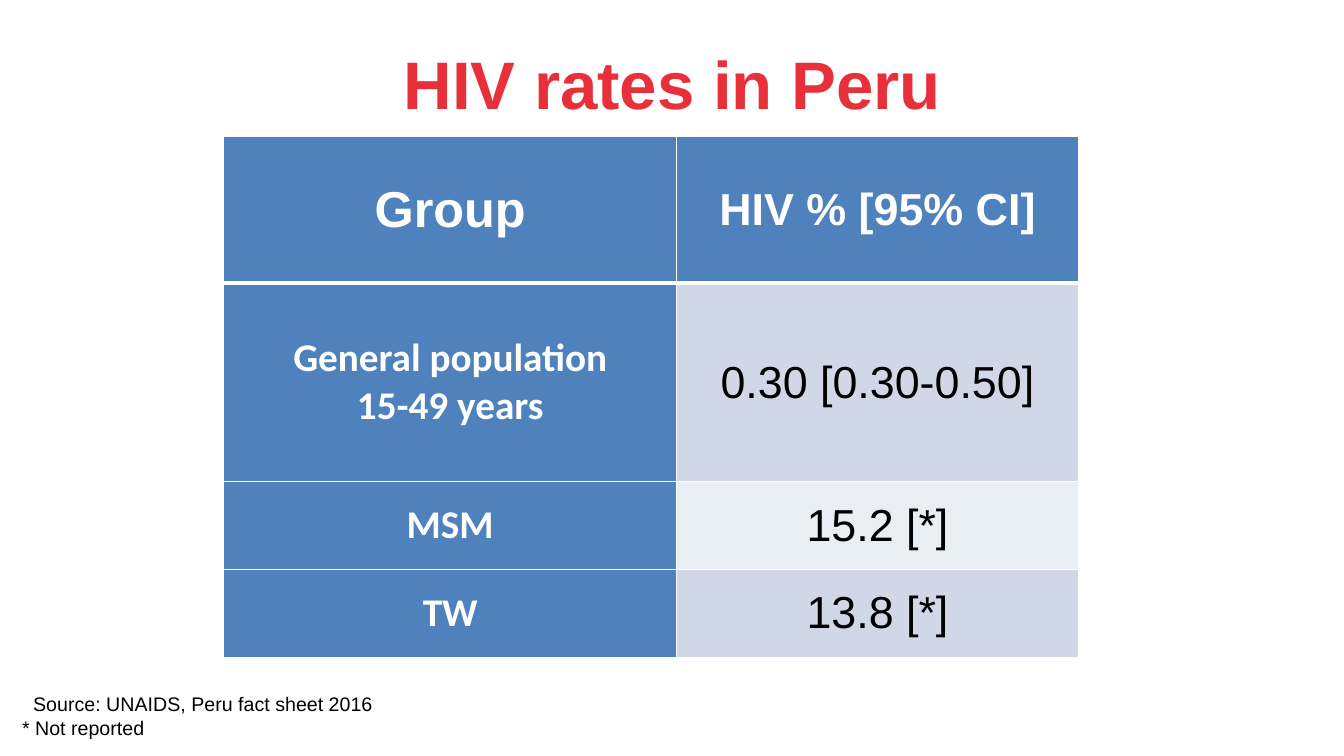
import dataclasses

import lxml.etree
import pptx
import pptx.dml.color
import pptx.enum.text
import pptx.oxml.ns
import pptx.util

Inches = pptx.util.Inches
Pt = pptx.util.Pt
ALIGN = pptx.enum.text.PP_ALIGN
MIDDLE = pptx.enum.text.MSO_ANCHOR.MIDDLE

BLUE = "4F81BD"
PALE = "D0D8E8"
LIGHT = "E9EDF4"
WHITE = "FFFFFF"
BLACK = "000000"
RED = "E8303B"


@dataclasses.dataclass(frozen=True)
class Style:
    size: int
    font: str
    color: str
    bold: bool = False


@dataclasses.dataclass(frozen=True)
class Entry:
    lines: tuple[str, ...]
    style: Style
    fill: str


HEAD = Style(36, "Arial", WHITE, True)
RATE = Style(32, "Arial", WHITE, True)
GROUP = Style(28, "Calibri", WHITE, True)
VALUE = Style(32, "Arial", BLACK)
TITLE = Style(48, "Arial", RED, True)
NOTE = Style(14, "Arial", BLACK)

COLS = (4.49, 3.99)
ROWS = (1.46, 1.97, 0.87, 0.87)
GRID = (
    (Entry(("Group",), HEAD, BLUE), Entry(("HIV % [95% CI]",), RATE, BLUE)),
    (
        Entry(("General population", "15-49 years"), GROUP, BLUE),
        Entry(("0.30 [0.30-0.50]",), VALUE, PALE),
    ),
    (Entry(("MSM",), GROUP, BLUE), Entry(("15.2 [*]",), VALUE, LIGHT)),
    (Entry(("TW",), GROUP, BLUE), Entry(("13.8 [*]",), VALUE, PALE)),
)


def rgb(code: str) -> pptx.dml.color.RGBColor:
    return pptx.dml.color.RGBColor.from_string(code)


def write(frame, lines: tuple[str, ...], style: Style, align: ALIGN) -> None:
    for index, line in enumerate(lines):
        para = frame.add_paragraph() if index else frame.paragraphs[0]
        para.alignment = align
        run = para.add_run()
        run.text = line
        run.font.size = Pt(style.size)
        run.font.name = style.font
        run.font.bold = style.bold
        run.font.color.rgb = rgb(style.color)


def border(cell, side: str, width: float) -> None:
    qn = pptx.oxml.ns.qn
    props = cell._tc.get_or_add_tcPr()
    line = lxml.etree.SubElement(props, qn(f"a:ln{side}"), w=str(Pt(width)))
    solid = lxml.etree.SubElement(line, qn("a:solidFill"))
    lxml.etree.SubElement(solid, qn("a:srgbClr"), val=WHITE)


def draw_cell(cell, entry: Entry, row: int) -> None:
    widths = {"L": 1, "R": 1, "T": 3 if row == 1 else 1, "B": 3 if row == 0 else 1}
    for side, width in widths.items():
        border(cell, side, width)
    cell.fill.solid()
    cell.fill.fore_color.rgb = rgb(entry.fill)
    cell.vertical_anchor = MIDDLE
    cell.margin_left = cell.margin_right = Inches(0.07)
    cell.margin_top = cell.margin_bottom = 0
    write(cell.text_frame, entry.lines, entry.style, ALIGN.CENTER)


def draw_title(slide) -> None:
    title = slide.shapes.title
    title.left, title.top = Inches(0.62), Inches(0.19)
    title.width, title.height = Inches(12.1), Inches(1.25)
    title.text_frame.vertical_anchor = MIDDLE
    write(title.text_frame, ("HIV rates in Peru",), TITLE, ALIGN.CENTER)


def draw_table(slide) -> None:
    frame = slide.shapes.add_table(
        len(ROWS), len(COLS), Inches(2.22), Inches(1.35),
        Inches(sum(COLS)), Inches(sum(ROWS)),
    )
    table = frame.table
    table.horz_banding = False
    table.first_col = True
    for col, width in zip(table.columns, COLS):
        col.width = Inches(width)
    for row, height in zip(table.rows, ROWS):
        row.height = Inches(height)
    for r, entries in enumerate(GRID):
        for c, entry in enumerate(entries):
            draw_cell(table.cell(r, c), entry, r)


def draw_note(slide) -> None:
    box = slide.shapes.add_textbox(
        Inches(0.12), Inches(6.82), Inches(8.82), Inches(0.57)
    )
    frame = box.text_frame
    frame.word_wrap = True
    frame.auto_size = pptx.enum.text.MSO_AUTO_SIZE.SHAPE_TO_FIT_TEXT
    lines = ("Source: UNAIDS, Peru fact sheet 2016", "* Not reported")
    write(frame, lines, NOTE, ALIGN.LEFT)
    first = frame.paragraphs[0]._p.get_or_add_pPr()
    first.set("marL", str(Inches(0.11)))
    first.set("indent", "0")


def main() -> None:
    deck = pptx.Presentation()
    deck.slide_width, deck.slide_height = Inches(13.33), Inches(7.5)
    slide = deck.slides.add_slide(deck.slide_layouts[5])
    slide.background.fill.solid()
    slide.background.fill.fore_color.rgb = rgb(WHITE)
    draw_title(slide)
    draw_table(slide)
    draw_note(slide)
    deck.save("out.pptx")


if __name__ == "__main__":
    main()
